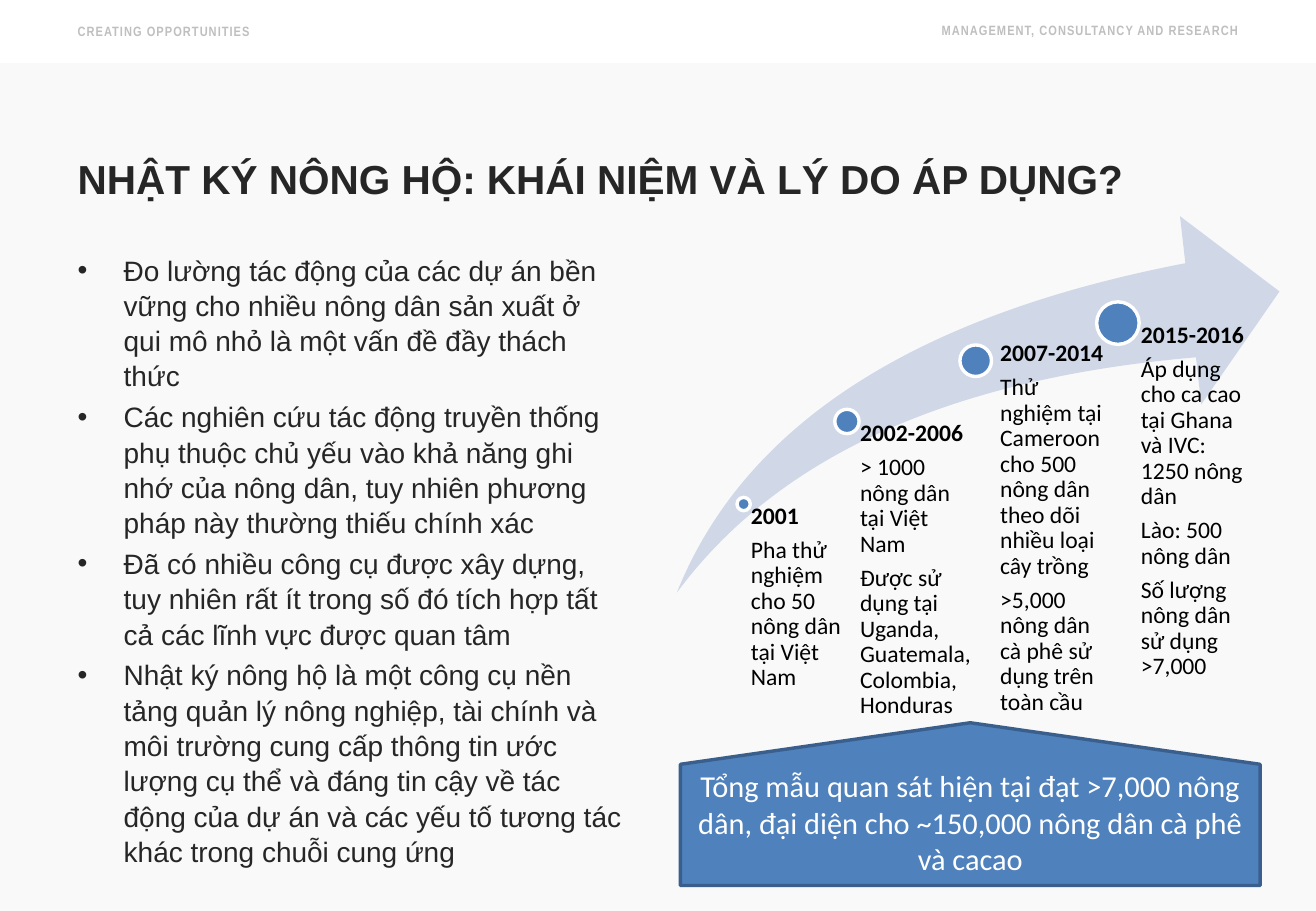
from lxml import etree
from pptx import Presentation
from pptx.dml.color import RGBColor
from pptx.enum import shapes, text
from pptx.oxml.ns import qn
from pptx.util import Inches, Pt

BLUE, DARK, GREY = "4F81BD", "262626", "BFBFBF"

BULLETS = [
    "Đo lường tác động của các dự án bền vững cho nhiều nông dân sản xuất ở "
    "qui mô nhỏ là một vấn đề đầy thách thức",
    "Các nghiên cứu tác động truyền thống phụ thuộc chủ yếu vào khả năng ghi "
    "nhớ của nông dân, tuy nhiên phương pháp này thường thiếu chính xác",
    "Đã có nhiều công cụ được xây dựng, tuy nhiên rất ít trong số đó tích hợp "
    "tất cả các lĩnh vực được quan tâm",
    "Nhật ký nông hộ là một công cụ nền tảng quản lý nông nghiệp, tài chính và "
    "môi trường cung cấp thông tin ước lượng cụ thể và đáng tin cậy về tác động "
    "của dự án và các yếu tố tương tác khác trong chuỗi cung ứng",
]

# Dot centre (x, y) and diameter, text offset from the centre, text size, year, notes
MILESTONES = [
    ((0.55, 2.37), 0.11, (0, 0), (0.85, 0.74), "2001",
     ["Pha thử nghiệm cho 50 nông dân tại Việt Nam"]),
    ((1.4, 1.69), 0.2, (0, 0), (1.04, 1.42), "2002-2006",
     ["> 1000 nông dân tại Việt Nam",
      "Được sử dụng tại Uganda, Guatemala, Colombia, Honduras"]),
    ((2.46, 1.19), 0.26, (0.06, -0.16), (1.04, 1.92), "2007-2014",
     ["Thử nghiệm tại Cameroon cho 500 nông dân theo dõi nhiều loại cây trồng",
      ">5,000 nông dân cà phê sử dụng trên toàn cầu"]),
    ((3.63, 0.88), 0.35, (0, 0), (1.04, 2.22), "2015-2016",
     ["Áp dụng cho ca cao tại Ghana và IVC: 1250 nông dân",
      "Lào: 500 nông dân",
      "Số lượng nông dân sử dụng >7,000"]),
]


def color(value):
    return RGBColor.from_string(value)


def add_shape(slide, kind, box, fill, line=None, adjustments=()):
    shape = slide.shapes.add_shape(kind, *map(Inches, box))
    shape.shadow.inherit = False
    shape.fill.solid()
    shape.fill.fore_color.rgb = color(fill)
    if line:
        shape.line.color.rgb = color(line)
        shape.line.width = Pt(2)
    else:
        shape.line.fill.background()
    for index, value in enumerate(adjustments):
        shape.adjustments[index] = value
    return shape


def add_frame(slide, box, insets=(0.1, 0.05, 0.1, 0.05)):
    frame = slide.shapes.add_textbox(*map(Inches, box)).text_frame
    frame.word_wrap = True
    (frame.margin_left, frame.margin_top,
     frame.margin_right, frame.margin_bottom) = map(Inches, insets)
    return frame


def add_paragraph(frame, first):
    return frame.paragraphs[0] if first else frame.add_paragraph()


def add_run(paragraph, words, font, size, fill, bold=False):
    run = paragraph.add_run()
    run.text = words
    run.font.name = font
    run.font.size = Pt(size)
    run.font.bold = bold
    run.font.color.rgb = color(fill)
    return run


def add_header(slide, box):
    left, top, width, height = box
    labels = [
        ("CREATING OPPORTUNITIES", (left, top + 0.01, 2.75, height), text.PP_ALIGN.LEFT),
        ("MANAGEMENT, CONSULTANCY AND RESEARCH",
         (left + width - 4.4, top, 4.4, height), text.PP_ALIGN.RIGHT),
    ]
    for words, label_box, alignment in labels:
        paragraph = add_frame(slide, label_box).paragraphs[0]
        paragraph.alignment = alignment
        run = add_run(paragraph, words, "Arial Narrow", 8, GREY, True)
        run.font._element.set("spc", "60")


def add_title(slide, box):
    frame = add_frame(slide, box)
    frame.vertical_anchor = text.MSO_ANCHOR.MIDDLE
    add_run(frame.paragraphs[0], "NHẬT KÝ NÔNG HỘ: KHÁI NIỆM VÀ LÝ DO ÁP DỤNG?",
            "Arial", 24, DARK, True)


def add_bullets(slide, box):
    frame = add_frame(slide, box)
    for index, words in enumerate(BULLETS):
        paragraph = add_paragraph(frame, index == 0)
        properties = paragraph._p.get_or_add_pPr()
        properties.set("marL", str(Inches(0.38)))
        properties.set("indent", str(-Inches(0.38)))
        etree.SubElement(properties, qn("a:buFont")).set("typeface", "Arial")
        etree.SubElement(properties, qn("a:buChar")).set("char", "•")
        paragraph.line_spacing = 1.05
        if index:
            paragraph.space_before = Pt(3.3)
        add_run(paragraph, words, "Arial", 16.6, DARK)


def add_timeline(slide, box):
    left, top = box[:2]
    add_shape(slide, shapes.MSO_SHAPE.SWOOSH_ARROW, box, "D0D8E8",
              adjustments=(0.25, 0.25))
    for (x, y), diameter, (shift_x, shift_y), size, year, notes in MILESTONES:
        center_x, center_y = left + x, top + y
        add_shape(slide, shapes.MSO_SHAPE.OVAL,
                  (center_x - diameter / 2, center_y - diameter / 2, diameter, diameter),
                  BLUE, "FFFFFF")
        frame = add_frame(slide, (center_x + shift_x, center_y + shift_y, *size),
                          (0.54 * diameter, 0, 0, 0))
        for index, words in enumerate([year, *notes]):
            paragraph = add_paragraph(frame, index == 0)
            paragraph.line_spacing = 0.9
            paragraph.space_after = Pt(4.9)
            add_run(paragraph, words, "Calibri", 14, "000000", index == 0)


def add_summary(slide, box):
    left, top, width, height = box
    # The pentagon is turned to point up, so its own width and height are swapped
    pentagon = add_shape(
        slide, shapes.MSO_SHAPE.PENTAGON,
        (left + (width - height) / 2, top + (height - width) / 2, height, width),
        BLUE, "3A5F8C", (0.255,))
    pentagon.rotation = 270
    frame = add_frame(slide, (left, top + 0.32, width, 1.01))
    paragraph = frame.paragraphs[0]
    paragraph.alignment = text.PP_ALIGN.CENTER
    add_run(paragraph, "Tổng mẫu quan sát hiện tại đạt >7,000 nông dân, đại diện cho "
            "~150,000 nông dân cà phê và cacao", "Calibri", 18, "FFFFFF")


def main():
    presentation = Presentation()
    presentation.slide_width = Inches(10.83)
    presentation.slide_height = Inches(7.5)
    slide = presentation.slides.add_slide(presentation.slide_layouts[6])

    # Grey page area below the header
    add_shape(slide, shapes.MSO_SHAPE.RECTANGLE, (0, 0.52, 10.83, 6.98), "F9F9F9")
    add_header(slide, (0.54, 0.13, 9.75, 0.4))
    add_title(slide, (0.54, 1.07, 9.75, 0.79))
    add_bullets(slide, (0.54, 2.02, 4.7, 4.68))
    add_timeline(slide, (5.57, 1.78, 4.96, 3.1))
    add_summary(slide, (5.6, 5.95, 4.77, 1.34))

    presentation.save("out.pptx")


if __name__ == "__main__":
    main()
